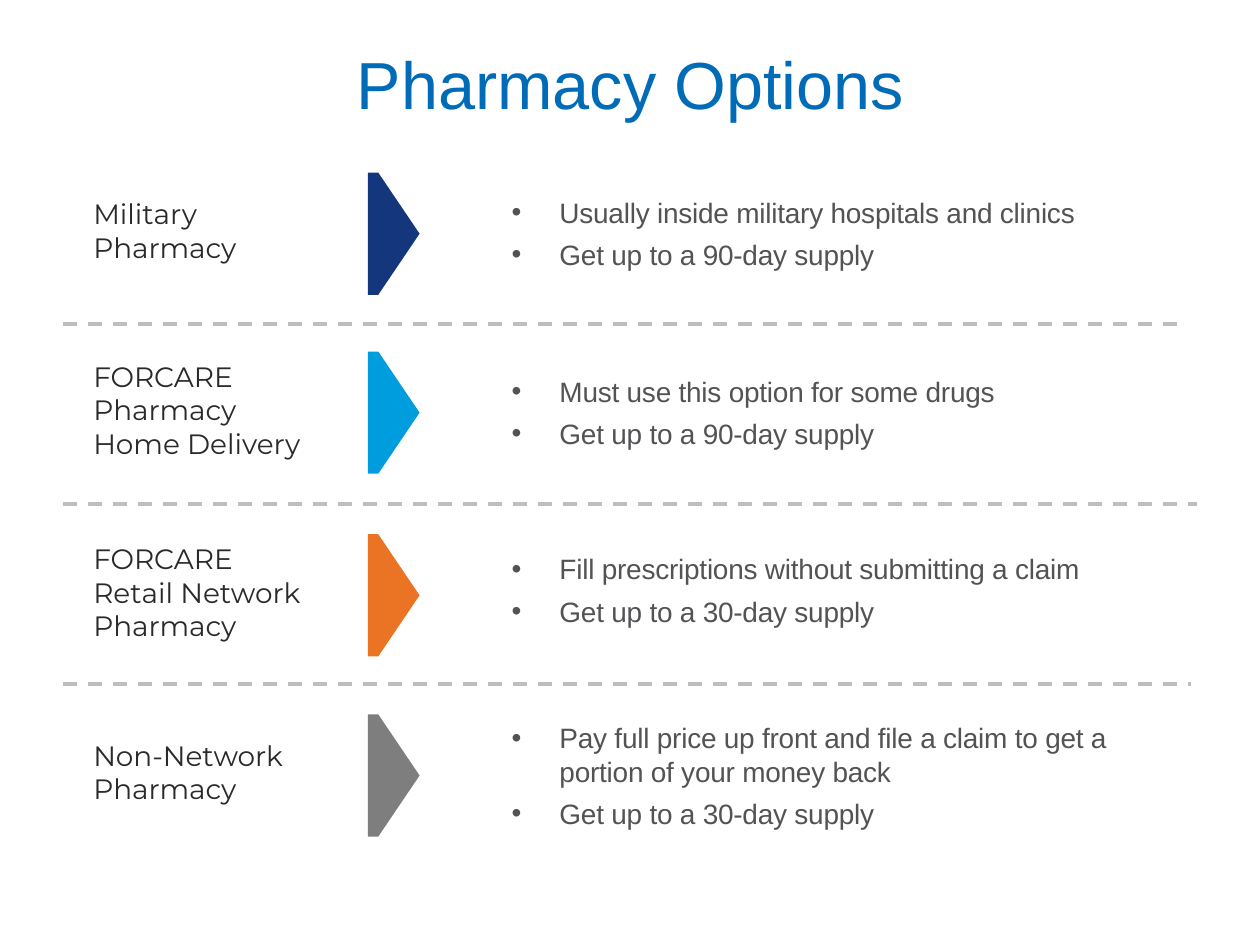
from lxml import etree
from pptx import Presentation
from pptx.dml.color import RGBColor
from pptx.enum.dml import MSO_LINE
from pptx.enum.shapes import MSO_CONNECTOR, MSO_SHAPE
from pptx.enum.text import MSO_ANCHOR, MSO_AUTO_SIZE, PP_ALIGN
from pptx.oxml.ns import qn
from pptx.util import Inches, Pt

STRAIGHT = MSO_CONNECTOR.STRAIGHT
PENTAGON = MSO_SHAPE.PENTAGON
DASH = MSO_LINE.DASH
TOP = MSO_ANCHOR.TOP
NO_AUTOFIT = MSO_AUTO_SIZE.NONE
LEFT, CENTER = PP_ALIGN.LEFT, PP_ALIGN.CENTER

COLORS = {
    "title": "006BB6",
    "label": "2A2A2B",
    "list": "535355",
    "divider": "BEBEBE",
    "navy": "13367C",
    "sky": "009DDE",
    "orange": "EA7424",
    "gray": "7E7E7E",
}

# label, label top, arrow colour, arrow top, bullets, list top
OPTIONS = [
    ("Military\nPharmacy", 1.56, "navy", 1.37,
     "Usually inside military hospitals and clinics\nGet up to a 90-day supply", 1.55),
    ("FORCARE\nPharmacy\nHome Delivery", 2.85, "sky", 2.79,
     "Must use this option for some drugs\nGet up to a 90-day supply", 2.97),
    ("FORCARE\nRetail Network\nPharmacy", 4.3, "orange", 4.24,
     "Fill prescriptions without submitting a claim\nGet up to a 30-day supply", 4.38),
    ("Non-Network\nPharmacy", 5.86, "gray", 5.67,
     "Pay full price up front and file a claim to get a portion of your money back\n"
     "Get up to a 30-day supply", 5.72),
]
DIVIDERS = [(2.57, 9.42), (4, 9.5), (5.43, 9.45)]  # height, right end


def color(name):
    return RGBColor.from_string(COLORS[name])


def write(shape, box, text, font_name, size, color_name, align=LEFT, bullets=False):
    """Place a text shape and give all its paragraphs one format."""
    shape.left, shape.top, shape.width, shape.height = [Inches(value) for value in box]
    frame = shape.text_frame
    frame.text = text
    frame.word_wrap = True
    frame.auto_size = NO_AUTOFIT
    frame.vertical_anchor = TOP
    frame.margin_left = frame.margin_right = frame.margin_top = frame.margin_bottom = 0
    for index, paragraph in enumerate(frame.paragraphs):
        if bullets:
            properties = paragraph._p.get_or_add_pPr()
            properties.set("marL", str(Inches(0.39)))
            properties.set("indent", str(Inches(-0.38)))
            etree.SubElement(properties, qn("a:buFont"), typeface="Arial")
            etree.SubElement(properties, qn("a:buChar"), char="•")
            for run in paragraph.runs:
                run._r.get_or_add_rPr().set("spc", "-10")
        paragraph.alignment = align
        paragraph.space_before = Pt(5 if bullets and index else 0)
        paragraph.font.name = font_name
        paragraph.font.size = Pt(size)
        paragraph.font.bold = False
        paragraph.font.color.rgb = color(color_name)


presentation = Presentation()
presentation.slide_width = Inches(10)
presentation.slide_height = Inches(7.5)
comparison_layout = presentation.slide_layouts[4]
slide = presentation.slides.add_slide(comparison_layout)
shapes = slide.shapes

write(shapes.title, (2.72, 0.34, 4.57, 0.66), "Pharmacy Options",
      "Arial", 38, "title", CENTER)

for number, option in enumerate(OPTIONS, start=1):
    label, label_top, arrow_color, arrow_top, bullets, list_top = option
    write(shapes.add_textbox(0, 0, 0, 0), (0.74, label_top, 1.95, 0.83), label,
          "Montserrat", 16, "label")
    write(slide.placeholders[number], (4.05, list_top, 4.9, 0.9), bullets,
          "Arial", 16, "list", bullets=True)

    arrow = shapes.add_shape(PENTAGON, Inches(2.92), Inches(arrow_top),
                             Inches(0.41), Inches(0.97))
    arrow.adjustments[0] = 0.8
    arrow.shadow.inherit = False
    arrow.fill.solid()
    arrow.fill.fore_color.rgb = color(arrow_color)
    arrow.line.fill.background()

for height, right in DIVIDERS:
    divider = shapes.add_connector(STRAIGHT, Inches(0.5), Inches(height),
                                   Inches(right), Inches(height))
    divider.line.color.rgb = color("divider")
    divider.line.width = Pt(2.04)
    divider.line.dash_style = DASH
    etree.SubElement(divider._element.spPr, qn("a:effectLst"))

presentation.save("out.pptx")
